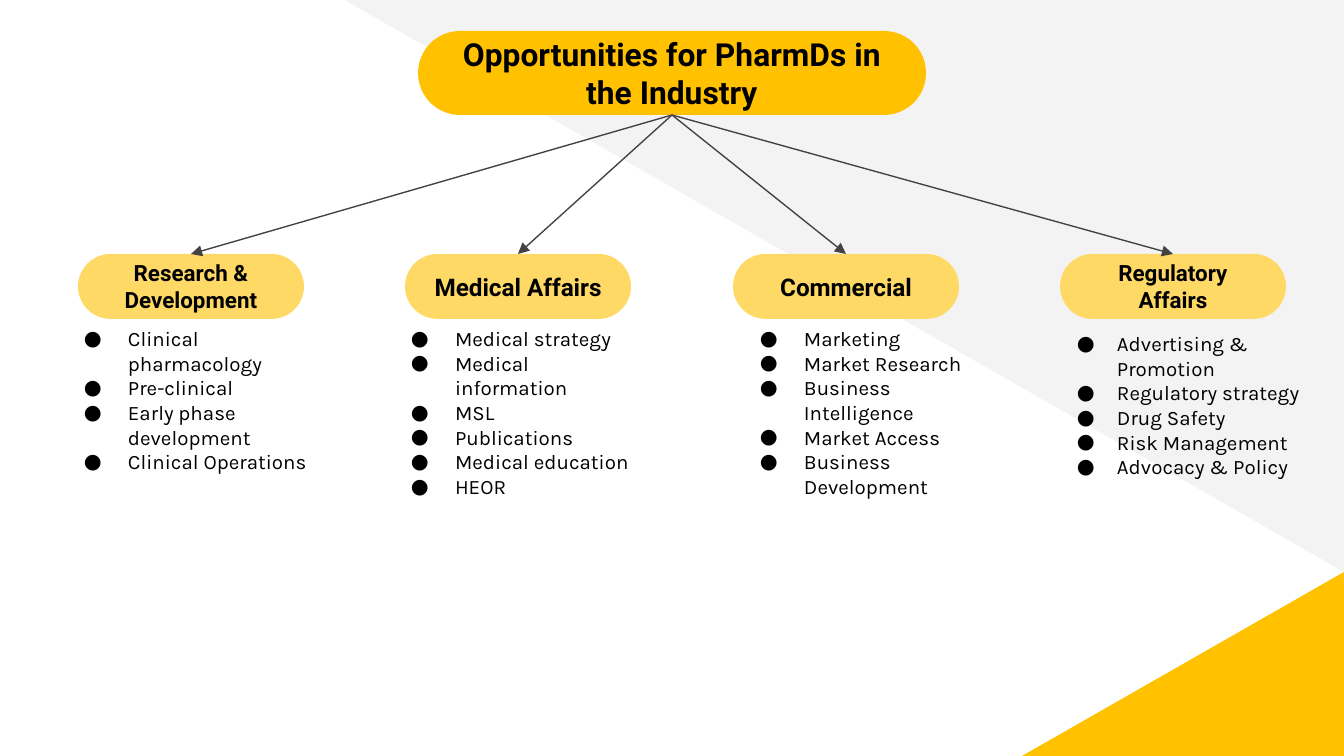
"""Build a slide that maps the industry opportunities for PharmDs."""
from lxml.etree import SubElement
from pptx import Presentation
from pptx.dml.color import RGBColor
from pptx.enum.shapes import MSO_CONNECTOR, MSO_SHAPE as SHAPE
from pptx.enum.text import MSO_ANCHOR, PP_ALIGN
from pptx.oxml.ns import qn
from pptx.util import Pt

PX = 914400 / 134.4
BLACK = RGBColor(0x00, 0x00, 0x00)
GRAY = RGBColor(0x43, 0x43, 0x43)
PALE = RGBColor(0xF3, 0xF3, 0xF3)
AMBER = RGBColor(0xFF, 0xC1, 0x00)
YELLOW = RGBColor(0xFF, 0xD9, 0x66)
INSET = round(13 * PX)
HANGING = round(44 * PX)

COLUMNS = [
    ("Research & Development", 12, 69, 313, 46,
     ["Clinical pharmacology", "Pre-clinical", "Early phase development",
      "Clinical Operations"]),
    ("Medical Affairs", 13, 390, 313, 52,
     ["Medical strategy", "Medical information", "MSL", "Publications",
      "Medical education", "HEOR"]),
    ("Commercial", 13, 745, 313, 46,
     ["Marketing", "Market Research", "Business Intelligence",
      "Market Access", "Business Development"]),
    ("Regulatory Affairs", 12, 1064, 318, 40,
     ["Advertising & Promotion", "Regulatory strategy", "Drug Safety",
      "Risk Management", "Advocacy & Policy"]),
]


def add_filled(kind, bounds, color):
    shape = page.shapes.add_shape(kind, *(round(n * PX) for n in bounds))
    shape.shadow.inherit = False
    shape.fill.solid()
    shape.fill.fore_color.rgb = color
    shape.line.fill.background()
    return shape


def add_text(frame, para, text, font, size, bold=False):
    frame.word_wrap = True
    frame.margin_left = frame.margin_right = INSET
    frame.margin_top = frame.margin_bottom = INSET
    span = para.add_run()
    span.text = text
    span.font.name = font
    span.font.size = Pt(size)
    span.font.bold = bold
    span.font.color.rgb = BLACK


deck = Presentation()
deck.slide_width = round(1344 * PX)
deck.slide_height = round(756 * PX)
page = deck.slides.add_slide(deck.slide_layouts[6])

upper_corner = add_filled(SHAPE.RIGHT_TRIANGLE, (343, -1, 1001, 573), PALE)
upper_corner.rotation = 180
lower_corner = add_filled(SHAPE.RIGHT_TRIANGLE, (1022, 572, 322, 184), AMBER)
lower_corner._element.spPr.xfrm.set("flipH", "1")

pills = []
headings = [("Opportunities for PharmDs in the Industry", 17,
             (418, 31, 508, 84), AMBER)]
for index, column in enumerate(COLUMNS):
    bounds = (78 + index * 655 // 2, 254, 226, 65)
    headings.append((column[0], column[1], bounds, YELLOW))
for text, size, bounds, color in headings:
    pill = add_filled(SHAPE.ROUNDED_RECTANGLE, bounds, color)
    pill.adjustments[0] = 0.5
    frame = pill.text_frame
    frame.vertical_anchor = MSO_ANCHOR.MIDDLE
    para = frame.paragraphs[0]
    para.alignment = PP_ALIGN.CENTER
    add_text(frame, para, text, "Roboto", size, bold=True)
    pills.append(pill)

title, *branches = pills
for branch in branches:
    arrow = page.shapes.add_connector(MSO_CONNECTOR.STRAIGHT, 0, 0, 0, 0)
    arrow.begin_connect(title, 2)
    arrow.end_connect(branch, 0)
    arrow.line.color.rgb = GRAY
    arrow.line.width = Pt(0.75)
    SubElement(arrow.line._get_or_add_ln(), qn("a:tailEnd"), type="triangle")
    SubElement(arrow._element.spPr, qn("a:effectLst"))

for _, _, left, top, indent, items in COLUMNS:
    bounds = (left, top, 258, 239)
    box = page.shapes.add_textbox(*(round(n * PX) for n in bounds))
    frame = box.text_frame
    for index, item in enumerate(items):
        para = frame.add_paragraph() if index else frame.paragraphs[0]
        add_text(frame, para, item, "Karla", 11)
        props = para._p.get_or_add_pPr()
        props.set("marL", str(round(indent * PX)))
        props.set("indent", str(-HANGING))
        bullet_color = SubElement(props, qn("a:buClr"))
        SubElement(bullet_color, qn("a:srgbClr"), val=str(BLACK))
        SubElement(props, qn("a:buFont"), typeface="Karla")
        SubElement(props, qn("a:buChar"), char="●")

deck.save("out.pptx")
